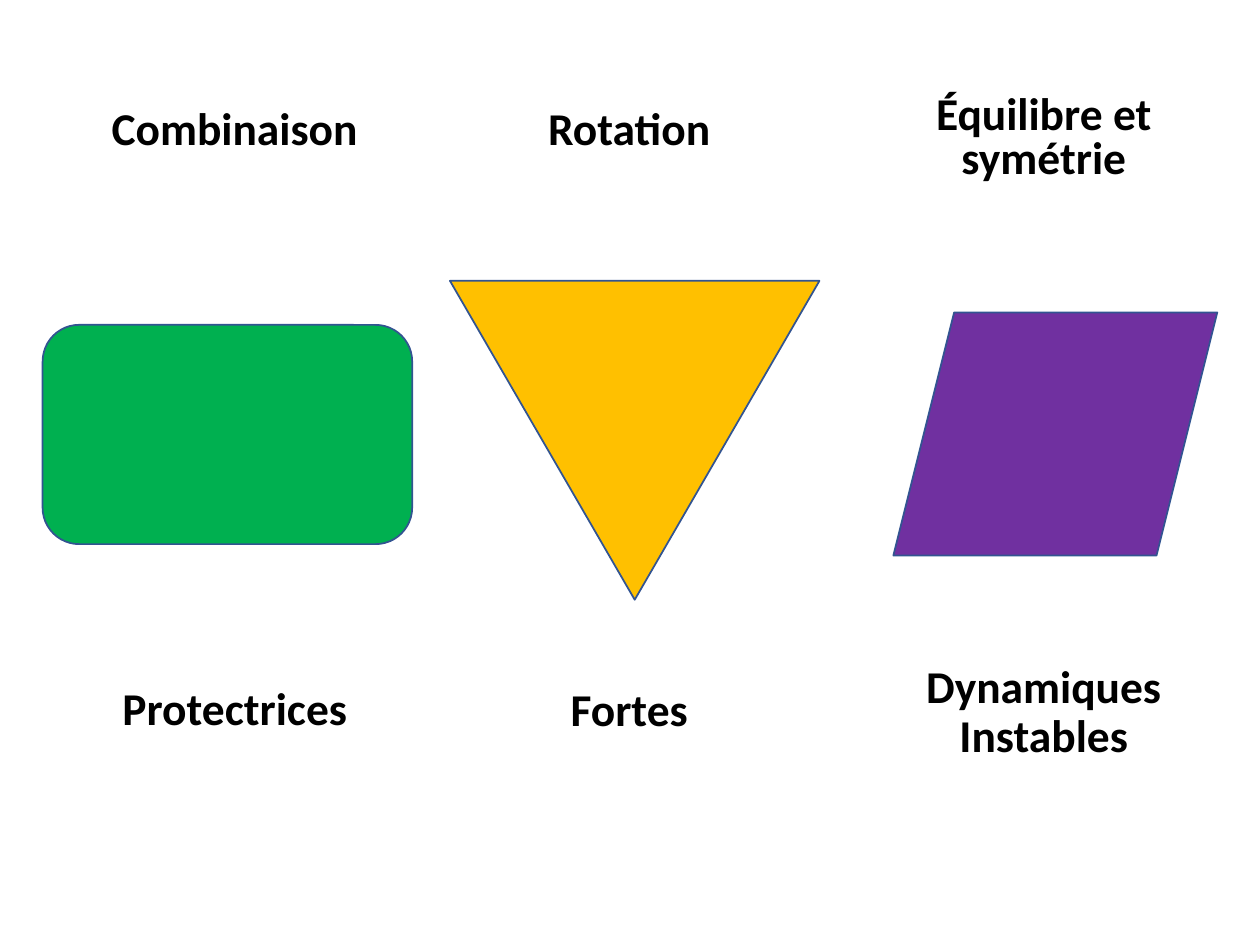
from pptx import Presentation
from pptx.dml.color import RGBColor
from pptx.enum.shapes import MSO_SHAPE
from pptx.enum.text import MSO_ANCHOR, PP_ALIGN
from pptx.util import Cm, Pt

GREEN = RGBColor(0x00, 0xB0, 0x50)
AMBER = RGBColor(0xFF, 0xC0, 0x00)
PURPLE = RGBColor(0x70, 0x30, 0xA0)
OUTLINE = RGBColor(0x32, 0x54, 0x91)
BLACK = RGBColor(0x00, 0x00, 0x00)


def add_label(page, text, left, top, width, height, spacing=0.9):
    """Add a bold, centred, bottom-anchored label; each line is a paragraph."""
    box = page.shapes.add_textbox(Cm(left), Cm(top), Cm(width), Cm(height))
    frame = box.text_frame
    frame.word_wrap = True
    frame.vertical_anchor = MSO_ANCHOR.BOTTOM
    frame.text = text
    for para in frame.paragraphs:
        para.alignment = PP_ALIGN.CENTER
        para.line_spacing = spacing
        para.font.name = "Calibri"
        para.font.size = Pt(26)
        para.font.bold = True
        para.font.color.rgb = BLACK


deck = Presentation()
deck.slide_width, deck.slide_height = Cm(25.4), Cm(19.05)
page = deck.slides.add_slide(deck.slide_layouts[6])

# Figures: preset, fill, left, top, width, height, rotation
figures = [
    (MSO_SHAPE.ROUNDED_RECTANGLE, GREEN, 0.86, 6.55, 7.45, 4.42, 0),
    (MSO_SHAPE.ISOSCELES_TRIANGLE, AMBER, 9.07, 5.66, 7.45, 6.43, 180),
    (MSO_SHAPE.PARALLELOGRAM, PURPLE, 18.01, 6.3, 6.53, 4.9, 0),
]
for preset, colour, left, top, width, height, rotation in figures:
    figure = page.shapes.add_shape(preset, Cm(left), Cm(top), Cm(width), Cm(height))
    figure.rotation = rotation
    figure.shadow.inherit = False
    figure.fill.solid()
    figure.fill.fore_color.rgb = colour
    figure.line.color.rgb = OUTLINE
    figure.line.width = Pt(1)

# Columns: left, width, then the principle above and the quality below,
# each with its top and height
columns = [
    (1.47, 6.53, ("Combinaison", 1.7, 1.55, 0.9), ("Protectrices", 13.39, 1.55, 0.9)),
    (9.42, 6.53, ("Rotation", 1.95, 1.3, 0.9), ("Fortes", 13.66, 1.3, 0.9)),
    (17.55, 6.99, ("Équilibre et symétrie", 1.7, 2.11, 0.8),
     ("Dynamiques\nInstables", 13.11, 2.39, 0.9)),
]
for left, width, *labels in columns:
    for text, top, height, spacing in labels:
        add_label(page, text, left, top, width, height, spacing=spacing)

deck.save("out.pptx")
